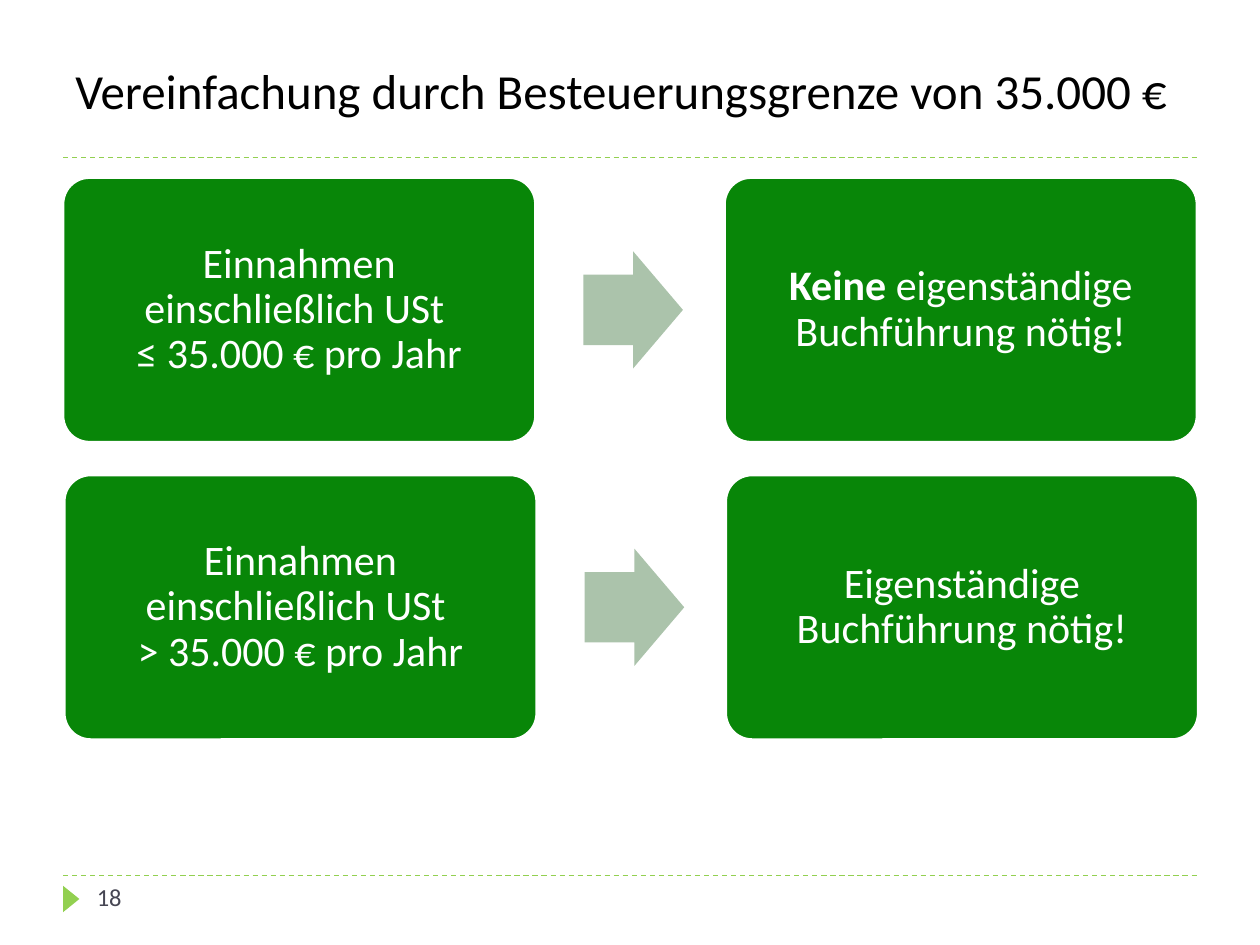
from lxml.etree import SubElement
from pptx import Presentation
from pptx.dml.color import RGBColor
from pptx.enum.dml import MSO_LINE_DASH_STYLE as Dash
from pptx.enum.shapes import MSO_CONNECTOR_TYPE as Connector, MSO_SHAPE as Shape
from pptx.enum.text import MSO_ANCHOR as Anchor, PP_ALIGN as Align
from pptx.oxml.ns import qn
from pptx.util import Inches, Pt

COLORS = {"accent": "92D050", "box": "088608", "arrow": "ABC3AB",
          "light": "FFFFFF", "title": "000000", "number": "464653"}
WIDTH, HEIGHT = 10, 7.5
MARGIN = 0.05 * WIDTH
TITLE_LINE, FOOTER_LINE = 1.25, 6.95
BOX_WIDTH, BOX_HEIGHT = 3.75, 2.1
COLUMN_STEP, ROW_STEP, ROW_SHIFT = 5.25, 2.36, 0.01
ARROW_WIDTH, ARROW_HEIGHT, ARROW_OFFSET = 0.79, 0.93, 4.13
FIRST_ROW = 1.41


def add_shape(kind, left, top, width, height, color, adjustments):
    shape = slide.shapes.add_shape(kind, Inches(left), Inches(top), Inches(width), Inches(height))
    shape.shadow.inherit = False
    shape.fill.solid()
    shape.fill.fore_color.rgb = RGBColor.from_string(COLORS[color])
    shape.line.fill.background()
    for index, value in enumerate(adjustments):
        shape.adjustments[index] = value
    return shape


def write_lines(shape, lines, size, color, paragraph_format, frame_format):
    frame = shape.text_frame
    for name, value in {"word_wrap": True, **frame_format}.items():
        setattr(frame, name, value)
    paragraph = frame.paragraphs[0]
    for name, value in paragraph_format.items():
        setattr(paragraph, name, value)
    for number, line in enumerate(lines):
        if number:
            paragraph.add_line_break()
        for text, bold in line:
            run = paragraph.add_run()
            run.text = text
            for name, value in {"name": "Calibri", "size": Pt(size), "bold": bold}.items():
                setattr(run.font, name, value)
            run.font.color.rgb = RGBColor.from_string(COLORS[color])


presentation = Presentation()
presentation.slide_width, presentation.slide_height = Inches(WIDTH), Inches(HEIGHT)
slide = presentation.slides.add_slide(presentation.slide_layouts[6])

for top in (FOOTER_LINE, TITLE_LINE):
    rule = slide.shapes.add_connector(
        Connector.STRAIGHT, Inches(MARGIN), Inches(top), Inches(WIDTH - MARGIN), Inches(top))
    rule.line.color.rgb = RGBColor.from_string(COLORS["accent"])
    rule.line.width = Pt(0.75)
    rule.line.dash_style = Dash.DASH
    SubElement(rule._element.spPr, qn("a:effectLst"))

marker = add_shape(Shape.ISOSCELES_TRIANGLE, 0.46, 7.07, 0.21, 0.13, "accent", [0.5])
marker.rotation = 90

title = slide.shapes.add_textbox(
    Inches(MARGIN), Inches(0.17), Inches(WIDTH - 2 * MARGIN), Inches(TITLE_LINE - 0.17))
write_lines(title, [[("Vereinfachung durch Besteuerungsgrenze von 35.000 €", False)]],
            28, "title", {}, {"vertical_anchor": Anchor.MIDDLE})

page_number = slide.shapes.add_textbox(Inches(0.67), Inches(FOOTER_LINE), Inches(2.17), Inches(0.4))
write_lines(page_number, [[("18", False)]], 14, "number", {}, {})

income = "Einnahmen einschließlich USt "
rows = [
    ([[(income, False)], [("≤ 35.000 € pro Jahr", False)]],
     [[("Keine", True), (" eigenständige Buchführung nötig!", False)]]),
    ([[(income, False)], [("> 35.000 € pro Jahr", False)]],
     [[("Eigenständige Buchführung nötig!", False)]]),
]
box_paragraph = {"alignment": Align.CENTER, "line_spacing": 0.9}
box_frame = {"vertical_anchor": Anchor.MIDDLE}
for side in ("left", "top", "right", "bottom"):
    box_frame[f"margin_{side}"] = Inches(0.1)

for row, cells in enumerate(rows):
    left = MARGIN + row * ROW_SHIFT
    top = FIRST_ROW + row * ROW_STEP
    for column, lines in enumerate(cells):
        box = add_shape(Shape.ROUNDED_RECTANGLE, left + column * COLUMN_STEP, top,
                        BOX_WIDTH, BOX_HEIGHT, "box", [0.1])
        box.line.color.rgb = RGBColor.from_string(COLORS["light"])
        box.line.width = Pt(1.5)
        write_lines(box, lines, 24, "light", box_paragraph, box_frame)
    add_shape(Shape.RIGHT_ARROW, left + ARROW_OFFSET, top + (BOX_HEIGHT - ARROW_HEIGHT) / 2,
              ARROW_WIDTH, ARROW_HEIGHT, "arrow", [0.6, 0.5])

presentation.save("out.pptx")
